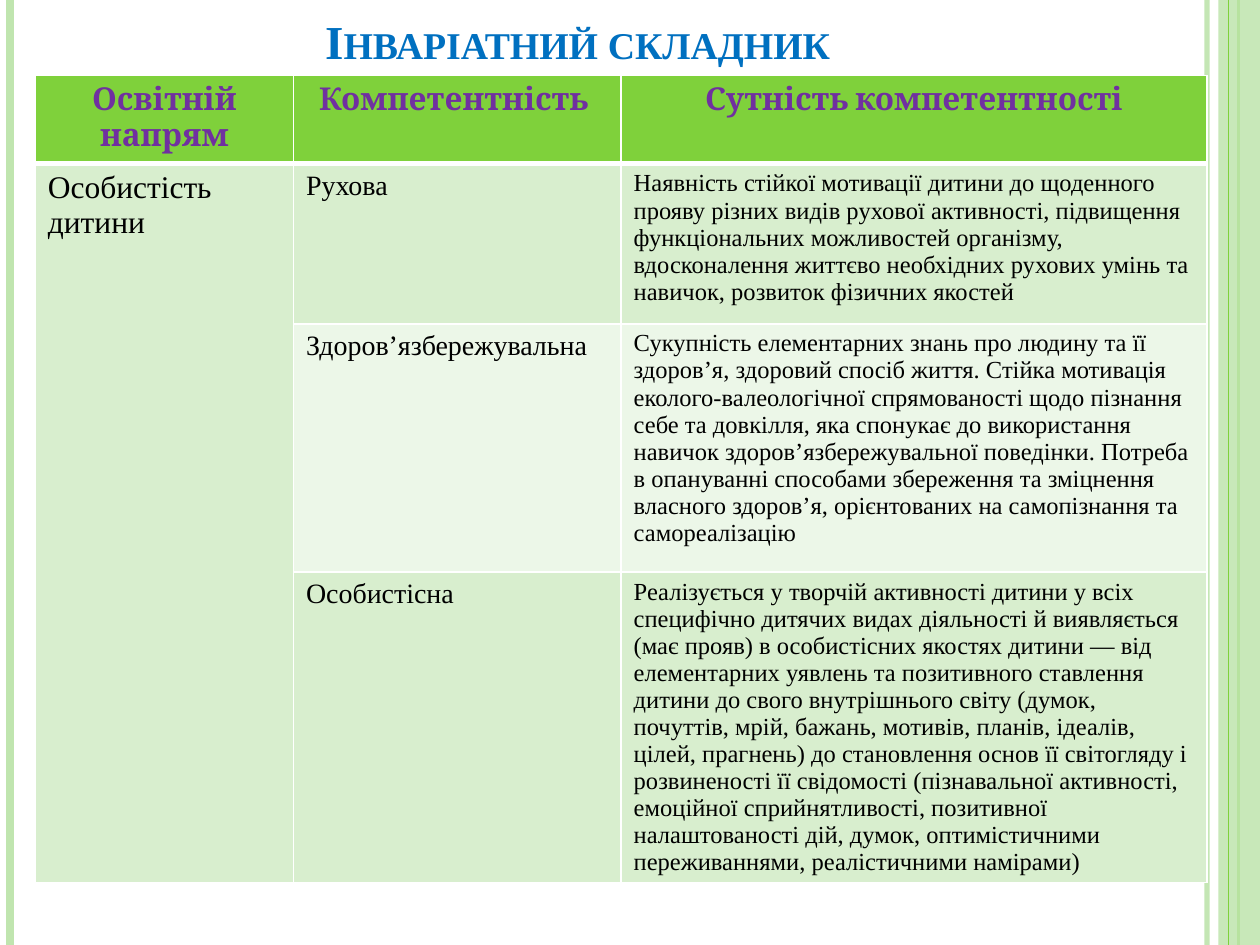
from lxml import etree
from pptx import Presentation
from pptx.dml.color import RGBColor
from pptx.enum.shapes import MSO_CONNECTOR, MSO_SHAPE
from pptx.enum.text import MSO_ANCHOR, MSO_AUTO_SIZE, PP_ALIGN
from pptx.oxml.ns import qn
from pptx.util import Inches, Pt

STRAIGHT = MSO_CONNECTOR.STRAIGHT
RECTANGLE = MSO_SHAPE.RECTANGLE
BOTTOM = MSO_ANCHOR.BOTTOM
NO_FIT = MSO_AUTO_SIZE.NONE
CENTER, LEFT = PP_ALIGN.CENTER, PP_ALIGN.LEFT

GREEN = RGBColor(0x7F, 0xD1, 0x3B)
PALE_GREEN = RGBColor(0xC0, 0xE5, 0xAF)
BAND_DARK = RGBColor(0xD8, 0xEE, 0xCE)
BAND_LIGHT = RGBColor(0xEC, 0xF7, 0xE8)
BLUE = RGBColor(0x00, 0x70, 0xC0)
PURPLE = RGBColor(0x70, 0x30, 0xA0)
BLACK = RGBColor(0, 0, 0)
WHITE = RGBColor(0xFF, 0xFF, 0xFF)

SERIF = "Times New Roman"
TITLE_FORMAT = {"name": SERIF, "size": Pt(27), "bold": True}
HEADER_FORMAT = {"name": "Cambria", "size": Pt(18), "bold": True}
COLUMN_FORMATS = [{"name": SERIF, "size": Pt(size), "bold": False}
                  for size in (18, 16, 14)]

COLUMN_WIDTHS = (2.05, 2.6, 4.65)
ROW_HEIGHTS = (0.7, 1.27, 1.97, 2.46)
ROWS = [
    ("Освітній напрям", "Компетентність ", "Сутність компетентності"),
    ("Особистість дитини", "Рухова",
     "Наявність стійкої мотивації дитини до щоденного прояву різних видів "
     "рухової активності, підвищення функціональних можливостей організму, "
     "вдосконалення життєво необхідних рухових умінь та навичок, розвиток "
     "фізичних якостей"),
    ("", "Здоров’язбережувальна",
     "Сукупність елементарних знань про людину та її здоров’я, здоровий "
     "спосіб життя. Стійка мотивація еколого-валеологічної спрямованості щодо "
     "пізнання себе та довкілля, яка спонукає до використання навичок "
     "здоров’язбережувальної поведінки. Потреба в опануванні способами "
     "збереження та зміцнення власного здоров’я, орієнтованих на "
     "самопізнання та самореалізацію"),
    ("", "Особистісна",
     "Реалізується у творчій активності дитини у всіх специфічно дитячих видах "
     "діяльності й виявляється (має прояв) в особистісних якостях дитини — від "
     "елементарних уявлень та позитивного ставлення дитини до свого "
     "внутрішнього світу (думок, почуттів, мрій, бажань, мотивів, планів, "
     "ідеалів, цілей, прагнень) до становлення основ її світогляду і "
     "розвиненості її свідомості (пізнавальної активності, емоційної "
     "сприйнятливості, позитивної налаштованості дій, думок, оптимістичними "
     "переживаннями, реалістичними намірами)"),
]


def write_text(frame, text, text_format, color, alignment):
    para = frame.paragraphs[0]
    para.alignment = alignment
    span = para.add_run()
    span.text = text
    for name, value in text_format.items():
        setattr(span.font, name, value)
    span.font.color.rgb = color
    return span


def set_opacity(fill_parent, percent):
    color = fill_parent.find(f"{qn('a:solidFill')}/{qn('a:srgbClr')}")
    etree.SubElement(color, qn("a:alpha")).set("val", str(percent * 1000))


def add_stripe(page, x, height, color, width):
    stripe = page.shapes.add_connector(STRAIGHT, x, 0, x, height)
    stripe.line.color.rgb = color
    stripe.line.width = Pt(width)
    etree.SubElement(stripe._element.spPr, qn("a:effectLst"))
    return stripe


def add_side_stripes(page, width, height):
    """Vertical lines on both edges and the band on the right."""
    inner = add_stripe(page, Inches(9.58), height, PALE_GREEN, 3)
    set_opacity(inner._element.spPr.find(qn("a:ln")), 93)
    add_stripe(page, Inches(0.08), height, PALE_GREEN, 4.5)
    add_stripe(page, Inches(9.83), height, GREEN, 1.5)
    band_left = Inches(9.67)
    band = page.shapes.add_shape(RECTANGLE, band_left, 0, width - band_left, height)
    band.shadow.inherit = False
    band.fill.solid()
    band.fill.fore_color.rgb = PALE_GREEN
    band.line.fill.background()
    set_opacity(band._element.spPr, 87)
    add_stripe(page, Inches(9.75), height, GREEN, 0.75)


def place_title(page, left, top, width, height):
    title = page.shapes.title
    title.left, title.top, title.width, title.height = left, top, width, height
    frame = title.text_frame
    frame.auto_size = NO_FIT
    frame.vertical_anchor = BOTTOM
    span = write_text(frame, "Інваріатний складник", TITLE_FORMAT, BLUE, CENTER)
    span._r.get_or_add_rPr().set("cap", "small")


def set_borders(cell, widths):
    properties = cell._tc.get_or_add_tcPr()
    for side, width in widths.items():
        line = etree.SubElement(properties, qn(f"a:ln{side}"), w=str(Pt(width)))
        solid = etree.SubElement(line, qn("a:solidFill"))
        etree.SubElement(solid, qn("a:srgbClr"), val=str(WHITE))


def add_competence_table(page, left, top):
    table = page.shapes.add_table(
        len(ROWS), len(COLUMN_WIDTHS), left, top,
        Inches(sum(COLUMN_WIDTHS)), Inches(sum(ROW_HEIGHTS))).table
    for column, width in zip(table.columns, COLUMN_WIDTHS):
        column.width = Inches(width)
    for row, height in zip(table.rows, ROW_HEIGHTS):
        row.height = Inches(height)

    for row_index, texts in enumerate(ROWS):
        is_header = row_index == 0
        band = BAND_DARK if row_index % 2 else BAND_LIGHT
        borders = {"L": 1, "R": 1, "T": 3 if row_index == 1 else 1,
                   "B": 3 if is_header else 1}
        for column_index, text in enumerate(texts):
            cell = table.cell(row_index, column_index)
            set_borders(cell, borders)
            cell.fill.solid()
            cell.fill.fore_color.rgb = GREEN if is_header else band
            if is_header:
                write_text(cell.text_frame, text, HEADER_FORMAT, PURPLE, CENTER)
            elif text:
                write_text(cell.text_frame, text, COLUMN_FORMATS[column_index],
                           BLACK, LEFT)

    # One educational direction covers all the competences
    table.cell(1, 0).merge(table.cell(len(ROWS) - 1, 0))


def main():
    deck = Presentation()
    deck.slide_width, deck.slide_height = Inches(10), Inches(7.5)
    page = deck.slides.add_slide(deck.slide_layouts[5])
    add_side_stripes(page, deck.slide_width, deck.slide_height)
    place_title(page, Inches(0.5), Inches(0.13), Inches(8.17), Inches(0.47))
    add_competence_table(page, Inches(0.28), Inches(0.6))
    deck.save("out.pptx")


if __name__ == "__main__":
    main()
